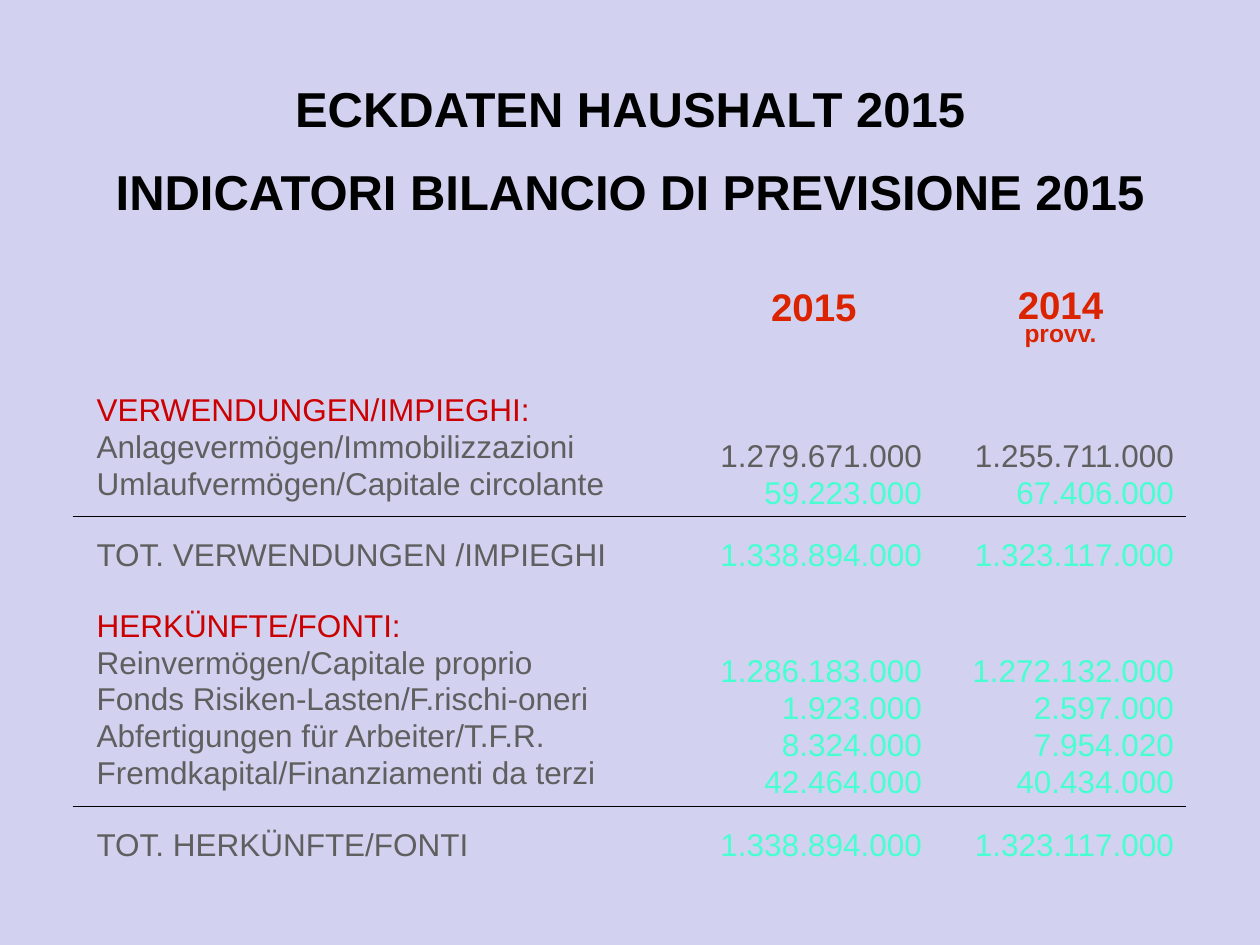
import pptx
import pptx.dml.color
import pptx.enum.shapes
import pptx.enum.text
import pptx.util
from lxml import etree

Inches, Pt = pptx.util.Inches, pptx.util.Pt
ALIGN = pptx.enum.text.PP_ALIGN
NO_STYLE = "{2D5ABB26-0587-4C30-8999-92F81FD0307C}"
SLIDE_W, SLIDE_H = 10, 7.5
COLORS = {"back": "D2D2F0", "ink": "000000", "year": "DC2300",
          "head": "CC0000", "label": "5F5F5F", "value": "47FFD1"}
TITLE = ["ECKDATEN HAUSHALT 2015", "INDICATORI BILANCIO DI PREVISIONE 2015"]
YEARS = [([" 2015"], 0.81, 8), (["2014", "provv."], 0.75, 0)]
COLUMNS = [4.75, 2, 2]
ROWS = [0.75, 1.19, 0.49, 1.81, 0.49]
SECTIONS = [
    ("VERWENDUNGEN/IMPIEGHI:",
     [("Anlagevermögen/Immobilizzazioni", "1.279.671.000", "1.255.711.000"),
      ("Umlaufvermögen/Capitale circolante", "59.223.000", "67.406.000")],
     ("TOT. VERWENDUNGEN /IMPIEGHI", "1.338.894.000", "1.323.117.000")),
    ("HERKÜNFTE/FONTI:",
     [("Reinvermögen/Capitale proprio", "1.286.183.000", "1.272.132.000"),
      ("Fonds Risiken-Lasten/F.rischi-oneri", "1.923.000", "2.597.000"),
      ("Abfertigungen für Arbeiter/T.F.R.", "8.324.000", "7.954.020"),
      ("Fremdkapital/Finanziamenti da terzi", "42.464.000", "40.434.000")],
     ("TOT. HERKÜNFTE/FONTI", "1.338.894.000", "1.323.117.000")),
]


def rgb(name):
    """Return the named palette colour."""
    return pptx.dml.color.RGBColor.from_string(COLORS[name])


def write(tf, lines, align, spacing=1.0, before=0):
    """Write (text, size, colour, bold) lines as paragraphs of a text frame."""
    tf.text = "\n".join(line[0] for line in lines)
    for p, (_, size, color, bold) in zip(tf.paragraphs, lines):
        p.alignment, p.line_spacing = align, spacing
        p.space_before = Pt(before)
        font = p.runs[0].font
        font.name, font.size, font.bold = "Arial", Pt(size), bold
        font.color.rgb = rgb(color)


def fill_cell(cell, lines, align, spacing, before, top=0.17):
    """Format one table cell and write its lines."""
    cell.fill.background()
    cell.margin_left = cell.margin_right = Inches(0.1)
    cell.margin_top, cell.margin_bottom = Inches(top), Inches(0.17)
    write(cell.text_frame, lines, align, spacing, before)


def add_title(s, left, top, width, height):
    """Place the two-line bilingual title in the given box."""
    sp = s.shapes.title
    sp.left, sp.top, sp.width, sp.height = map(Inches, (left, top, width, height))
    tf = sp.text_frame
    tf.word_wrap = True
    tf.auto_size = pptx.enum.text.MSO_AUTO_SIZE.NONE
    tf.vertical_anchor = pptx.enum.text.MSO_ANCHOR.MIDDLE
    write(tf, [(text, 28, "ink", True) for text in TITLE], ALIGN.CENTER)
    tf.paragraphs[1].space_before = Pt(13.5)


def add_rule(s, left, y, width):
    """Draw a thin horizontal rule."""
    line = s.shapes.add_connector(pptx.enum.shapes.MSO_CONNECTOR.STRAIGHT,
                                  Inches(left), Inches(y), Inches(left + width), Inches(y))
    line.line.color.rgb = rgb("ink")
    line.line.width = Pt(0.75)
    etree.SubElement(line._element.spPr, pptx.oxml.ns.qn("a:effectLst"))


def fill_section(table, row, heading, items, total):
    """Fill the item row and the total row of one balance section."""
    for col in range(len(COLUMNS)):
        align = ALIGN.RIGHT if col else ALIGN.LEFT
        color = "value" if col else "label"
        lines = [(item[col], 18, color, False) for item in items]
        if col == 0:
            lines.insert(0, (heading, 18, "head", False))
        elif row == 1:
            lines[0] = (items[0][col], 18, "label", False)
        fill_cell(table.cell(row, col), lines, align, 0.8, 5, 0.53 if col else 0.17)
        fill_cell(table.cell(row + 1, col), [(total[col], 18, color, False)], align, 0.5, 6)


def add_balance(s, left, top):
    """Place the balance table with a rule above each total."""
    frame = s.shapes.add_table(len(ROWS), len(COLUMNS), Inches(left), Inches(top),
                               Inches(sum(COLUMNS)), Inches(sum(ROWS)))
    table = frame.table
    table.first_row = table.horz_banding = False
    table._tbl.tblPr.find(pptx.oxml.ns.qn("a:tableStyleId")).text = NO_STYLE
    for column, width in zip(table.columns, COLUMNS):
        column.width = Inches(width)
    for row, height in zip(table.rows, ROWS):
        row.height = Inches(height)
    table.cell(0, 0).fill.background()
    for col, (texts, spacing, before) in enumerate(YEARS, 1):
        lines = [(text, size, "year", True) for text, size in zip(texts, (22, 14))]
        fill_cell(table.cell(0, col), lines, ALIGN.CENTER, spacing, before, 0.08)
    for row, section in zip((1, 3), SECTIONS):
        fill_section(table, row, *section)
        add_rule(s, left - 0.09, top + sum(ROWS[:row + 1]) - 0.09, sum(COLUMNS) + 0.09)


def main():
    """Build and save the budget slide."""
    prs = pptx.Presentation()
    prs.slide_width, prs.slide_height = Inches(SLIDE_W), Inches(SLIDE_H)
    s = prs.slides.add_slide(prs.slide_layouts[5])
    s.background.fill.solid()
    s.background.fill.fore_color.rgb = rgb("back")
    add_title(s, SLIDE_W / 30, 0.58, SLIDE_W * 14 / 15, 1.21)
    add_balance(s, SLIDE_W / 15, SLIDE_H * 0.3)
    prs.save("out.pptx")


if __name__ == "__main__":
    main()
